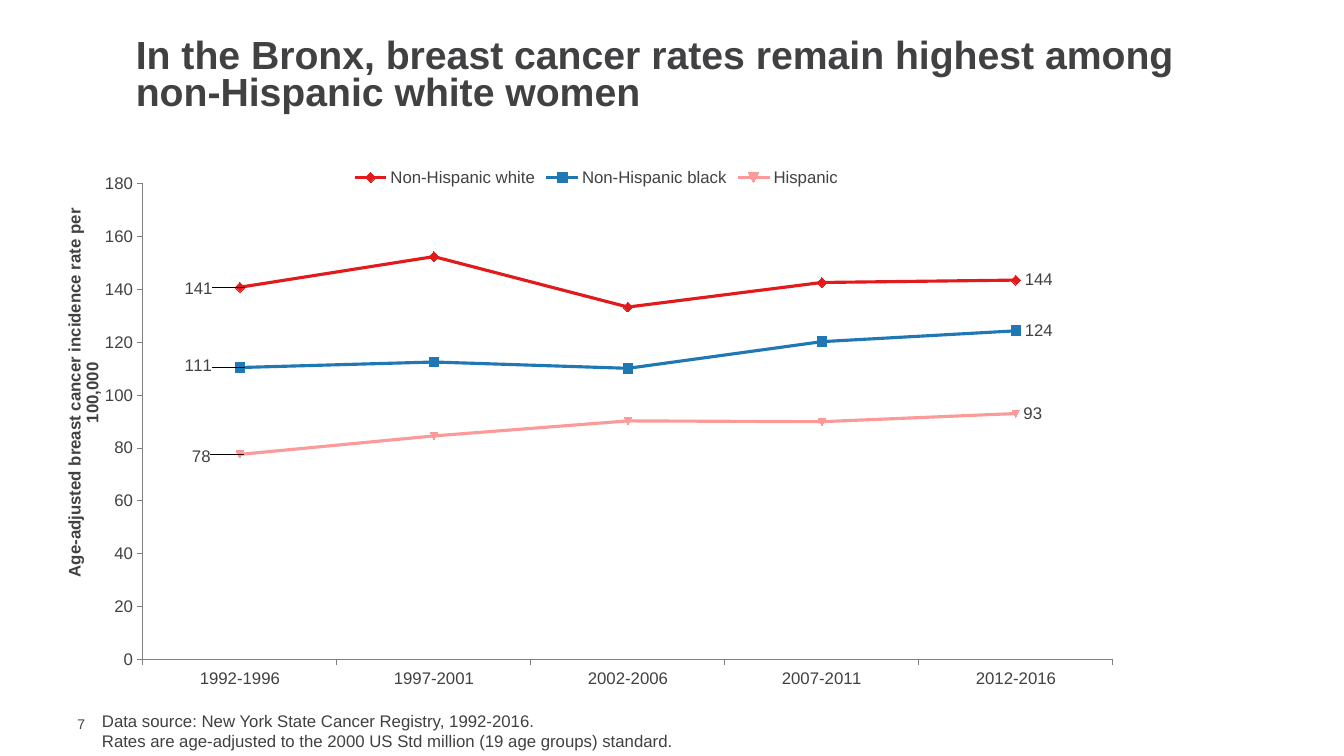
from lxml import etree
from pptx import Presentation
from pptx import util as u
from pptx.chart.data import CategoryChartData
from pptx.dml.color import RGBColor
from pptx.enum import chart as ch, text
from pptx.oxml import parse_xml
from pptx.oxml.ns import nsdecls, qn

COLOURS = {"ink": "414042", "axis": "808080", "white": "E31A1C",
           "black": "1F78B4", "hispanic": "FB9A99"}
PERIODS = ["1992-1996", "1997-2001", "2002-2006", "2007-2011", "2012-2016"]
# name, colour, marker (None = automatic), rates, shift of the first label in percent
GROUPS = [
    ("Non-Hispanic white", "white", ch.XL_MARKER_STYLE.DIAMOND,
     [140.9, 152.5, 133.4, 142.7, 143.6], (-5.8, 0.2)),
    ("Non-Hispanic black", "black", ch.XL_MARKER_STYLE.SQUARE,
     [110.5, 112.6, 110.2, 120.3, 124.4], (-5.8, -0.3)),
    ("Hispanic", "hispanic", None,
     [77.6, 84.6, 90.3, 90, 93.1], (-5, 0.5)),
]
LEADER_LINES = (
    '<c:extLst %s><c:ext uri="{CE6537A1-D6FC-4f65-9D91-7224C49458BB}" '
    'xmlns:c15="http://schemas.microsoft.com/office/drawing/2012/chart">'
    '<c15:showLeaderLines val="1"/></c:ext></c:extLst>' % nsdecls("c"))


def style(font, size, bold=False):
    font.name, font.size, font.bold = "Arial", u.Pt(size), bold
    font.color.rgb = RGBColor.from_string(COLOURS["ink"])


def manual_layout(modes, **percents):
    """Return a c:layout element from its modes and its percentages of the chart."""
    layout = parse_xml("<c:layout %s/>" % nsdecls("c"))
    manual = etree.SubElement(layout, qn("c:manualLayout"))
    for name, value in modes.items():
        etree.SubElement(manual, qn("c:" + name)).set("val", value)
    for name, value in percents.items():
        etree.SubElement(manual, qn("c:" + name)).set("val", str(round(value / 100, 4)))
    return layout


deck = Presentation()
deck.slide_width, deck.slide_height = u.Cm(33.87), u.Cm(19.05)
page = deck.slides.add_slide(deck.slide_layouts[5])

# Title
title = page.shapes.title
title.left, title.top, title.width, title.height = u.Cm(3.17), u.Cm(0.85), u.Cm(27.5), u.Cm(2.16)
title.text_frame.vertical_anchor = text.MSO_ANCHOR.MIDDLE
para = title.text_frame.paragraphs[0]
para.alignment, para.line_spacing = text.PP_ALIGN.LEFT, 0.8
span = para.add_run()
span.text = "In the Bronx, breast cancer rates remain highest among non-Hispanic white women"
style(span.font, 28, True)

# Chart
data = CategoryChartData(number_format="0")
data.categories = PERIODS
for name, colour, marker, rates, shift in GROUPS:
    data.add_series(name, rates)
chart = page.shapes.add_chart(ch.XL_CHART_TYPE.LINE_MARKERS, u.Cm(1.06), u.Cm(3.96),
                              u.Cm(27.94), u.Cm(13.82), data).chart
style(chart.font, 12)
chart.has_title = False
chart.has_legend = True
chart.legend.position = ch.XL_LEGEND_POSITION.TOP
chart.legend.include_in_layout = False
style(chart.legend.font, 12)

rate_axis = chart.value_axis
for axis in (chart.category_axis, rate_axis):
    axis.has_major_gridlines = False
    axis.major_tick_mark = ch.XL_TICK_MARK.OUTSIDE
    axis.minor_tick_mark = ch.XL_TICK_MARK.NONE
    axis.format.line.color.rgb = RGBColor.from_string(COLOURS["axis"])
    axis.format.line.width = u.Pt(0.75)
    style(axis.tick_labels.font, 12)
rate_axis.minimum_scale, rate_axis.maximum_scale, rate_axis.major_unit = 0, 180, 20
rate_axis.tick_labels.number_format = "0"
rate_axis.tick_labels.number_format_is_linked = False
span = rate_axis.axis_title.text_frame.paragraphs[0].add_run()
span.text = "Age-adjusted breast cancer incidence rate per 100,000"
style(span.font, 12, True)

edges = {"xMode": "edge", "yMode": "edge"}
title_xml = rate_axis.axis_title._element
plot_xml = chart._chartSpace.chart.plotArea
for parent in (title_xml, plot_xml):
    for old in parent.findall(qn("c:layout")):
        parent.remove(old)
title_xml.find(qn("c:tx")).addnext(manual_layout(edges, x=1.7, y=8.8))
plot_xml.insert(0, manual_layout({"layoutTarget": "inner", **edges},
                                 x=9.1, y=4.9, w=87.5, h=86.7))

for series, (name, colour, marker, rates, shift) in zip(chart.plots[0].series, GROUPS):
    rgb = RGBColor.from_string(COLOURS[colour])
    series.smooth = False
    series.format.line.color.rgb = rgb
    series.format.line.width = u.Pt(2.25)
    if marker is not None:
        series.marker.style, series.marker.size = marker, 7
        series.marker.format.fill.solid()
        series.marker.format.fill.fore_color.rgb = rgb
        series.marker.format.line.color.rgb = rgb
    for index in (0, len(PERIODS) - 1):
        label = series.points[index].data_label
        style(label.font, 12)
        label.position = ch.XL_LABEL_POSITION.RIGHT
    labels_xml = series._element.find(qn("c:dLbls"))
    labels_xml.find(qn("c:showVal")).set("val", "0")
    first = labels_xml.find(qn("c:dLbl"))
    first.find(qn("c:idx")).addnext(manual_layout({}, x=shift[0], y=shift[1]))
    for old in labels_xml.findall(qn("c:showLeaderLines")):
        labels_xml.remove(old)
    labels_xml.append(parse_xml(LEADER_LINES))

# Page number and source note: left, top, width, height, size, lines
NOTES = [
    (1.7, 18.03, 1.09, 0.43, 10, ["7"]),
    (2.32, 17.78, 25.2, 1.27, 12,
     ["Data source: New York State Cancer Registry, 1992-2016.",
      "Rates are age-adjusted to the 2000 US Std million (19 age groups) standard."]),
]
for left, top, width, height, size, lines in NOTES:
    box = page.shapes.add_textbox(u.Cm(left), u.Cm(top), u.Cm(width), u.Cm(height))
    frame = box.text_frame
    frame.word_wrap = True
    if len(lines) == 1:
        frame.margin_top = frame.margin_bottom = frame.margin_right = 0
        frame.vertical_anchor = text.MSO_ANCHOR.MIDDLE
    for number, line in enumerate(lines):
        para = frame.add_paragraph() if number else frame.paragraphs[0]
        span = para.add_run()
        span.text = line
        style(span.font, size)

deck.save("out.pptx")
